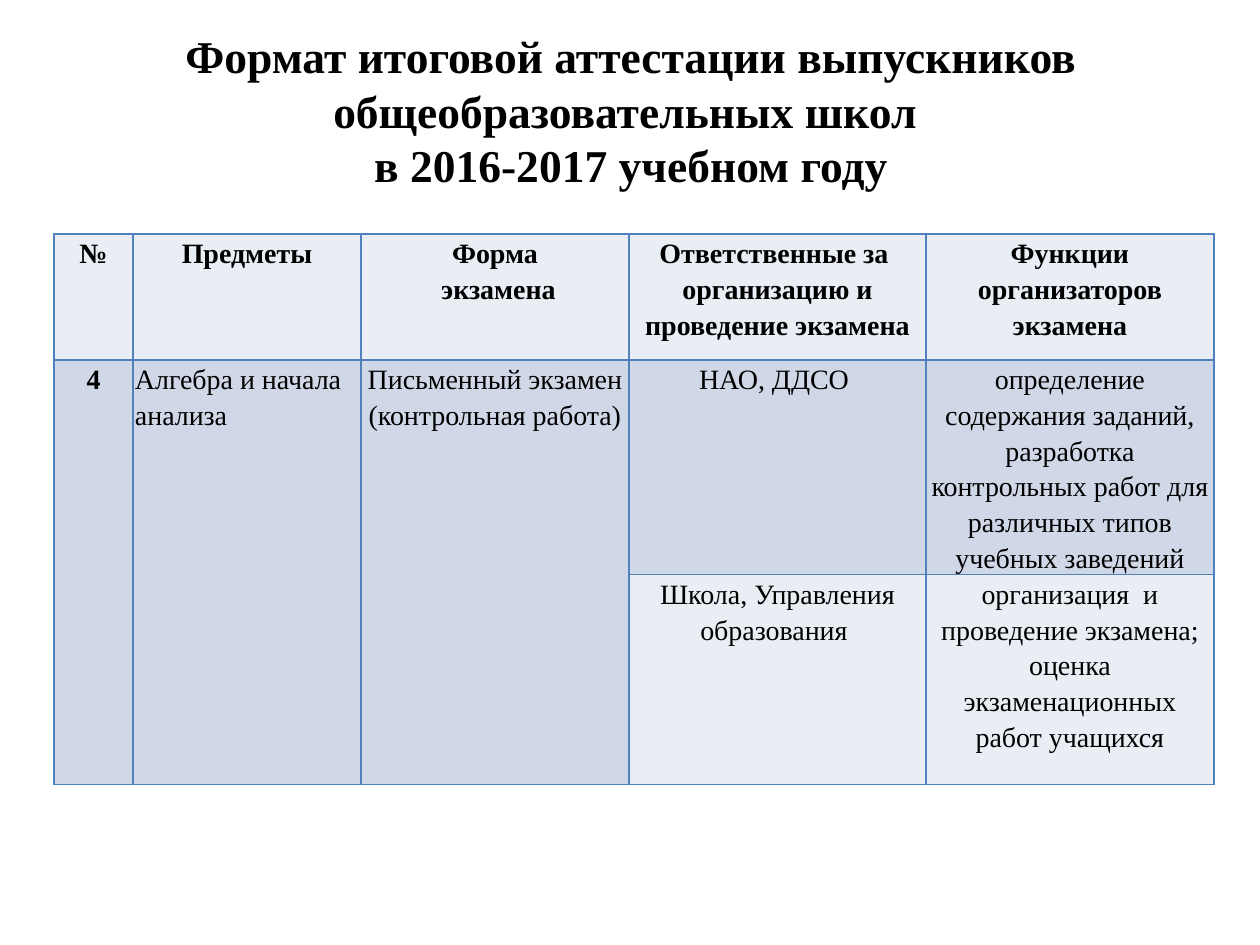
from dataclasses import dataclass
from typing import Optional

from lxml.etree import SubElement
from pptx import Presentation
from pptx.dml.color import RGBColor as Rgb
from pptx.enum.text import MSO_ANCHOR as Anchor, MSO_AUTO_SIZE as Auto, PP_ALIGN as Align
from pptx.oxml.ns import qn
from pptx.util import Emu, Pt

SCALE = 914400 / 126
FONT = "Times New Roman"
LIGHT, DARK, EDGE = "E9EDF4", "D0D8E8", "4F81BD"
COLS = (79, 228, 268, 297, 288)
ROWS = (126, 212, 210)


@dataclass
class Entry:
    """Content and look of one table cell."""
    text: str
    fill: str = LIGHT
    bold: bool = False
    align: Align = Align.CENTER
    span: int = 1


GRID: list[list[Optional[Entry]]] = [
    [Entry(text, bold=True) for text in (
        "№", "Предметы", "Форма\n экзамена",
        "Ответственные за  организацию и проведение экзамена",
        "Функции организаторов экзамена")],
    [Entry("4", DARK, bold=True, span=2),
     Entry("Алгебра и начала анализа", DARK, align=Align.LEFT, span=2),
     Entry("Письменный экзамен (контрольная работа)", DARK, span=2),
     Entry("НАО, ДДСО ", DARK),
     Entry("определение содержания заданий, разработка контрольных работ "
           "для различных типов учебных заведений", DARK)],
    [None, None, None,
     Entry("Школа, Управления образования "),
     Entry("организация  и проведение экзамена; оценка экзаменационных "
           "работ учащихся")],
]


def px(size: int) -> Emu:
    """Turn pixels into EMU."""
    return Emu(round(size * SCALE))


def color(code: str) -> Rgb:
    """Turn a hex string into a colour."""
    return Rgb.from_string(code)


def write(frame, text: str, size: int = 16, bold: bool = False,
          align: Align = Align.CENTER, space: float = 1.0) -> None:
    """Fill a text frame, one paragraph for each line of text."""
    frame.text = text
    for para in frame.paragraphs:
        para.alignment = align
        para.line_spacing = space
        for run in para.runs:
            font = run.font
            font.name, font.size, font.bold = FONT, Pt(size), bold
            font.color.rgb = color("000000")


def border(cell, code: str, width: int = 1) -> None:
    """Draw a line on all four sides of a cell."""
    props = cell._tc.get_or_add_tcPr()
    for spot, side in enumerate(("lnL", "lnR", "lnT", "lnB")):
        line = SubElement(props, qn(f"a:{side}"), w=str(Pt(width)))
        fill = SubElement(line, qn("a:solidFill"))
        SubElement(fill, qn("a:srgbClr"), val=code)
        props.insert(spot, line)


def add_title(slide, text: str) -> None:
    """Place and fill the title."""
    title = slide.shapes.title
    title.left, title.top, title.width, title.height = map(px, (64, 55, 1134, 157))
    frame = title.text_frame
    write(frame, text, size=26, bold=True)
    frame.word_wrap, frame.auto_size = True, Auto.NONE
    frame.vertical_anchor = Anchor.MIDDLE
    frame.margin_top, frame.margin_bottom = px(6), px(53)


def add_grid(slide, grid: list[list[Optional[Entry]]]) -> None:
    """Build the table of exams."""
    table = slide.shapes.add_table(
        len(ROWS), len(COLS), px(54), px(234), px(sum(COLS)), px(sum(ROWS))).table
    table.first_row = table.horz_banding = False
    for col, width in zip(table.columns, COLS):
        col.width = px(width)
    for row, height in zip(table.rows, ROWS):
        row.height = px(height)
    for r, line in enumerate(grid):
        for c, entry in enumerate(line):
            cell = table.cell(r, c)
            cell.margin_left = cell.margin_right = px(2)
            cell.margin_top = cell.margin_bottom = 0
            cell.fill.solid()
            cell.fill.fore_color.rgb = color(entry.fill if entry else DARK)
            border(cell, EDGE)
            if entry:
                write(cell.text_frame, entry.text, bold=entry.bold,
                      align=entry.align, space=1.15)
                if entry.span > 1:
                    cell.merge(table.cell(r + entry.span - 1, c))


def main() -> None:
    """Build and save the slide."""
    deck = Presentation()
    deck.slide_width, deck.slide_height = px(1260), px(945)
    slide = deck.slides.add_slide(deck.slide_layouts[5])
    add_title(slide, "Формат итоговой аттестации выпускников "
                     "общеобразовательных школ \vв 2016-2017 учебном году")
    add_grid(slide, GRID)
    deck.save("out.pptx")


if __name__ == "__main__":
    main()
